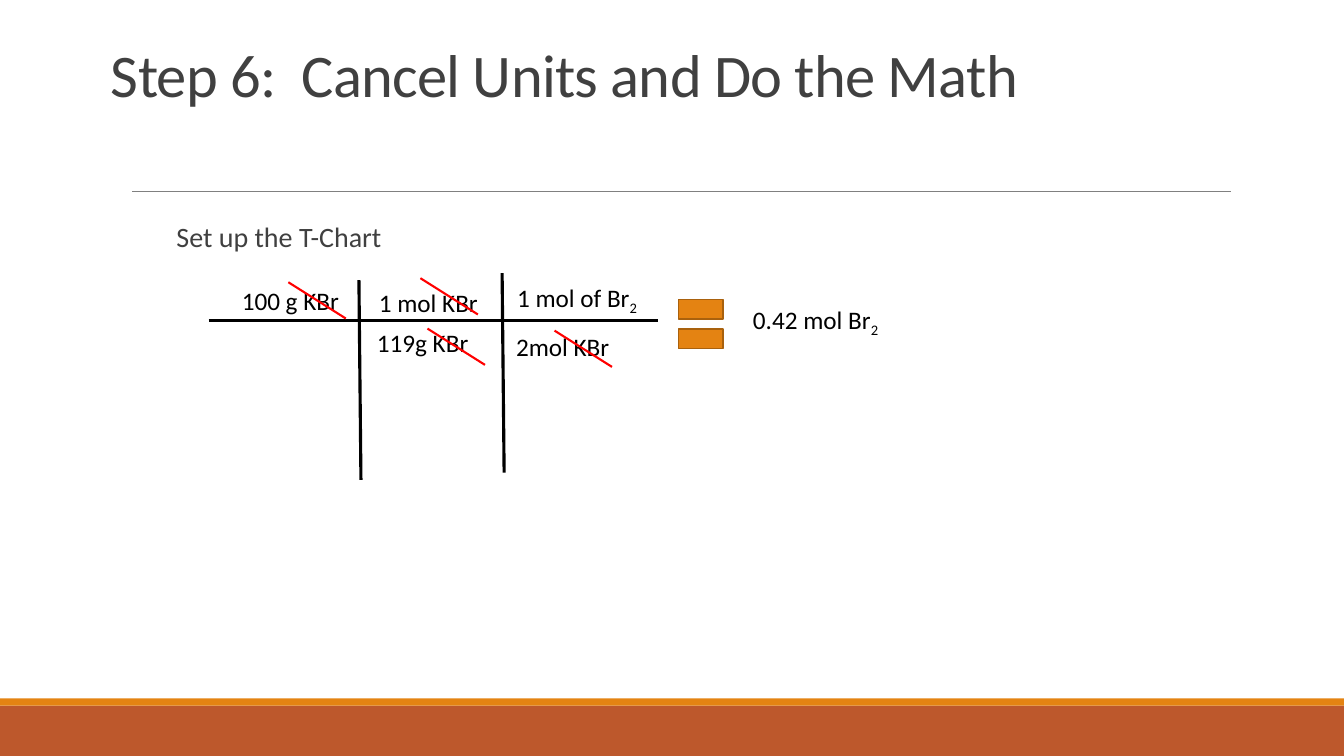
import pptx
import pptx.util
import pptx.dml.color
import pptx.enum.shapes
import pptx.enum.text
import pptx.oxml
import pptx.oxml.ns
from pptx.util import Inches

RGBColor = pptx.dml.color.RGBColor
SHAPE = pptx.enum.shapes.MSO_SHAPE
Pt = pptx.util.Pt

RUST = RGBColor(0xBD, 0x58, 0x2C)
ORANGE = RGBColor(0xE4, 0x83, 0x12)
BROWN = RGBColor(0xA9, 0x61, 0x0D)
GRAY = RGBColor(0x80, 0x80, 0x80)
DARK = RGBColor(0x40, 0x40, 0x40)
BLACK = RGBColor(0, 0, 0)
RED = RGBColor(0xFF, 0, 0)

deck = pptx.Presentation()
deck.slide_width = Inches(13.33)
deck.slide_height = Inches(7.5)
slide = deck.slides.add_slide(deck.slide_layouts[1])
shapes = slide.shapes


def add_span(para, text, size, color):
    span = para.add_run()
    span.text = text
    span.font.name = "Calibri"
    span.font.size = Pt(size)
    span.font.color.rgb = color
    return span


def add_line(x1, y1, x2, y2, color, width):
    line = shapes.add_connector(
        pptx.enum.shapes.MSO_CONNECTOR.STRAIGHT,
        Inches(x1), Inches(y1), Inches(x2), Inches(y2))
    line.line.color.rgb = color
    line.line.width = Pt(width)
    properties = line._element.spPr
    properties.append(pptx.oxml.parse_xml(
        "<a:effectLst %s/>" % pptx.oxml.ns.nsdecls("a")))


# Footer bands and title rule
for top, height, color in [(7, 0.5, RUST), (6.93, 0.07, ORANGE)]:
    band = shapes.add_shape(
        SHAPE.RECTANGLE, 0, Inches(top), deck.slide_width, Inches(height))
    band.shadow.inherit = False
    band.fill.solid()
    band.fill.fore_color.rgb = color
    band.line.fill.background()
add_line(1.31, 1.9, 12.21, 1.9, GRAY, 0.5)

# Title
title = shapes.title
title.left, title.top = Inches(1), Inches(0.38)
title.width, title.height = Inches(11.33), Inches(2.05)
frame = title.text_frame
frame.auto_size = pptx.enum.text.MSO_AUTO_SIZE.NONE
frame.vertical_anchor = pptx.enum.text.MSO_ANCHOR.TOP
frame.margin_top = Inches(0.1)
para = frame.paragraphs[0]
para.alignment = pptx.enum.text.PP_ALIGN.LEFT
para.line_spacing = 0.85
span = add_span(para, "Step 6:  Cancel Units and Do the Math", 43.2, DARK)
span.font._element.set("spc", "-50")

# Body
body = slide.placeholders[1]
body.left, body.top = Inches(1.65), Inches(2.17)
body.width, body.height = Inches(4.58), Inches(4.24)
frame = body.text_frame
frame.auto_size = pptx.enum.text.MSO_AUTO_SIZE.NONE
frame.margin_left = frame.margin_right = 0
para = frame.paragraphs[0]
para.line_spacing = 0.9
para.space_before = Pt(12)
para.space_after = Pt(2)
add_span(para, "Set up the T-Chart", 20, DARK)
settings = para._element.get_or_add_pPr()
settings.set("marL", str(Inches(0.1)))
settings.set("indent", "0")
settings.append(pptx.oxml.parse_xml(
    "<a:buNone %s/>" % pptx.oxml.ns.nsdecls("a")))

# T-chart grid
add_line(2.07, 3.18, 6.53, 3.18, BLACK, 2.25)
for x, y in [(3.56, 2.78), (4.98, 2.71)]:
    add_line(x, y, x + 0.02, y + 1.98, BLACK, 2.25)

# Quantities: left, top, width, text, subscript
quantities = [
    (2.3, 2.78, 1.64, "100 g KBr", ""),
    (3.64, 3.2, 1.48, "119g KBr", ""),
    (3.66, 2.8, 1.53, "1 mol KBr", ""),
    (5.03, 2.75, 1.81, "1 mol of Br", "2"),
    (5.02, 3.24, 1.37, "2mol KBr", ""),
    (7.37, 2.97, 1.64, "0.42 mol Br", "2"),
]
for left, top, width, text, subscript in quantities:
    box = shapes.add_textbox(
        Inches(left), Inches(top), Inches(width), Inches(0.4))
    box.text_frame.word_wrap = True
    para = box.text_frame.paragraphs[0]
    add_span(para, text, 18, BLACK)
    if subscript:
        span = add_span(para, subscript, 18, BLACK)
        span.font._element.set("baseline", "-25000")

equals = shapes.add_shape(
    SHAPE.MATH_EQUAL, Inches(6.65), Inches(2.8), Inches(0.6), Inches(0.83))
equals.shadow.inherit = False
equals.fill.solid()
equals.fill.fore_color.rgb = ORANGE
equals.line.color.rgb = BROWN
equals.line.width = Pt(1.25)

# Strokes through cancelled units
for x, y in [(2.86, 2.8), (4.24, 3.26), (4.17, 2.76), (5.5, 3.28)]:
    add_line(x, y, x + 0.57, y + 0.36, RED, 1.5)

deck.save("out.pptx")
